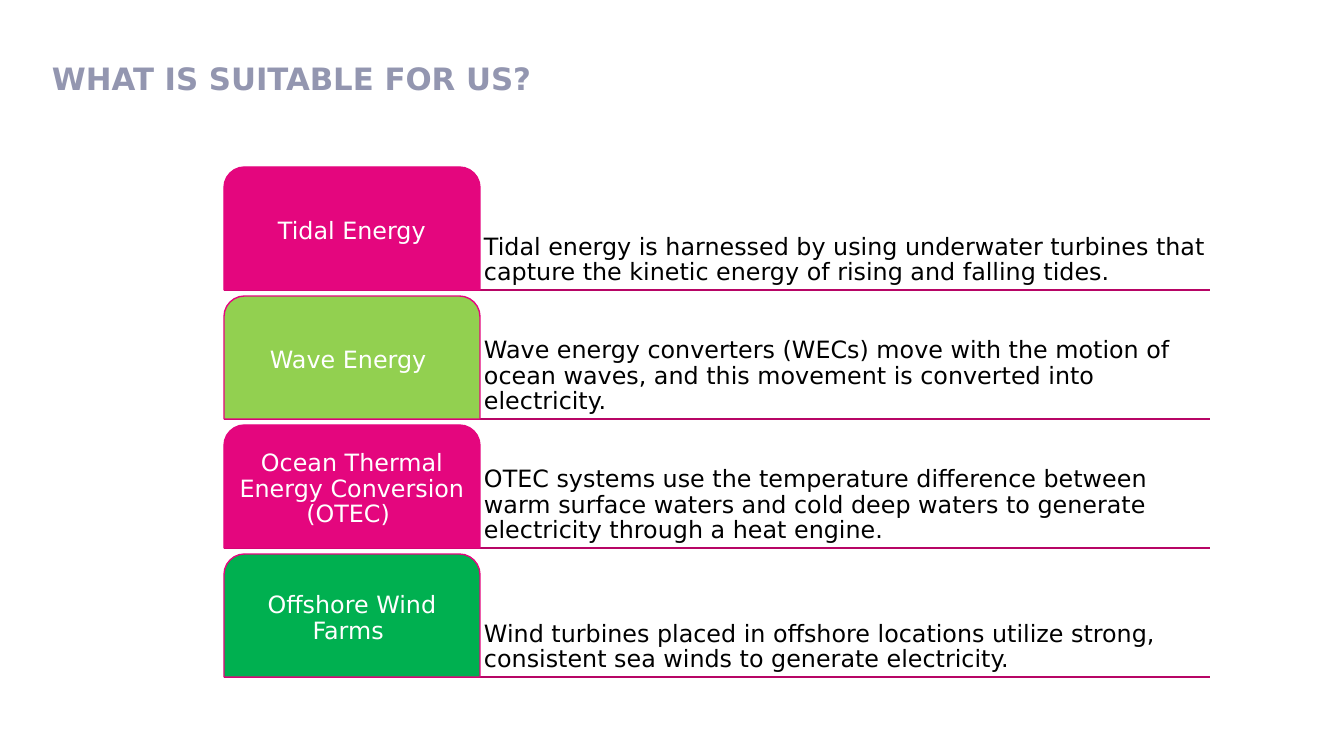
from pptx import Presentation, util as u
from pptx.dml.color import RGBColor
from pptx.enum import shapes, text
from lxml import etree

PX = 914400 / 100.8
INK = {"title": "9396B0", "pink": "E4067E", "lime": "92D050",
       "green": "00B050", "rule": "B70565", "white": "FFFFFF", "black": "000000"}
FONT = "DejaVu Sans"


def px(*sizes):
    return [u.Emu(round(n * PX)) for n in sizes]


def write(shape, words, size, ink, anchor, align, pad, bold=False):
    frame = shape.text_frame
    frame.text = words
    frame.word_wrap = True
    frame.auto_size = text.MSO_AUTO_SIZE.NONE
    frame.vertical_anchor = anchor
    frame.margin_left, frame.margin_top, frame.margin_right, frame.margin_bottom = px(*[pad] * 4)
    para = frame.paragraphs[0]
    para.alignment = align
    font = para.runs[0].font
    font.name, font.size, font.bold = FONT, u.Pt(size), bold
    font.color.rgb = RGBColor.from_string(INK[ink])
    return para


deck = Presentation()
deck.slide_width, deck.slide_height = px(1344, 756)
slide = deck.slides.add_slide(deck.slide_layouts[5])

# Title
title = slide.shapes.title
title.left, title.top, title.width, title.height = px(52, 60, 1157, 90)
write(title, "WHAT IS SUITABLE FOR US?", 22, "title",
      text.MSO_ANCHOR.TOP, text.PP_ALIGN.LEFT, 0, True)

# Energy sources: label, fill, description
rows = [
    ("Tidal Energy", "pink",
     "Tidal energy is harnessed by using underwater turbines that capture "
     "the kinetic energy of rising and falling tides."),
    ("Wave Energy ", "lime",
     "Wave energy converters (WECs) move with the motion of ocean waves, "
     "and this movement is converted into electricity."),
    ("Ocean Thermal Energy Conversion (OTEC) ", "pink",
     "OTEC systems use the temperature difference between warm surface waters "
     "and cold deep waters to generate electricity through a heat engine."),
    ("Offshore Wind Farms ", "green",
     "Wind turbines placed in offshore locations utilize strong, "
     "consistent sea winds to generate electricity."),
]
LEFT, MID, RIGHT = 224, 480, 1210
TOP, STEP, HIGH = 167, 129, 123

for i, (label, fill, about) in enumerate(rows):
    top = TOP + i * STEP
    base = top + HIGH

    # Rule under the row
    rule = slide.shapes.add_connector(
        shapes.MSO_CONNECTOR.STRAIGHT, *px(LEFT, base, RIGHT, base))
    rule.line.color.rgb = RGBColor.from_string(INK["rule"])
    rule.line.width = u.Pt(1)
    etree.SubElement(
        rule._element.spPr,
        "{http://schemas.openxmlformats.org/drawingml/2006/main}effectLst")

    # Description
    box = slide.shapes.add_textbox(*px(MID, top, RIGHT - MID, HIGH))
    para = write(box, about, 17, "black",
                 text.MSO_ANCHOR.BOTTOM, text.PP_ALIGN.LEFT, 4)
    para.line_spacing = 0.9

    # Tab with its label
    tab = slide.shapes.add_shape(
        shapes.MSO_SHAPE.ROUND_2_SAME_RECTANGLE, *px(LEFT, top, MID - LEFT, HIGH))
    tab.shadow.inherit = False
    tab.fill.solid()
    tab.fill.fore_color.rgb = RGBColor.from_string(INK[fill])
    tab.line.color.rgb = RGBColor.from_string(INK["pink"])
    tab.line.width = u.Pt(1)
    para = write(tab, label, 17, "white",
                 text.MSO_ANCHOR.MIDDLE, text.PP_ALIGN.CENTER, 4)
    para.line_spacing = 0.9

deck.save("out.pptx")
